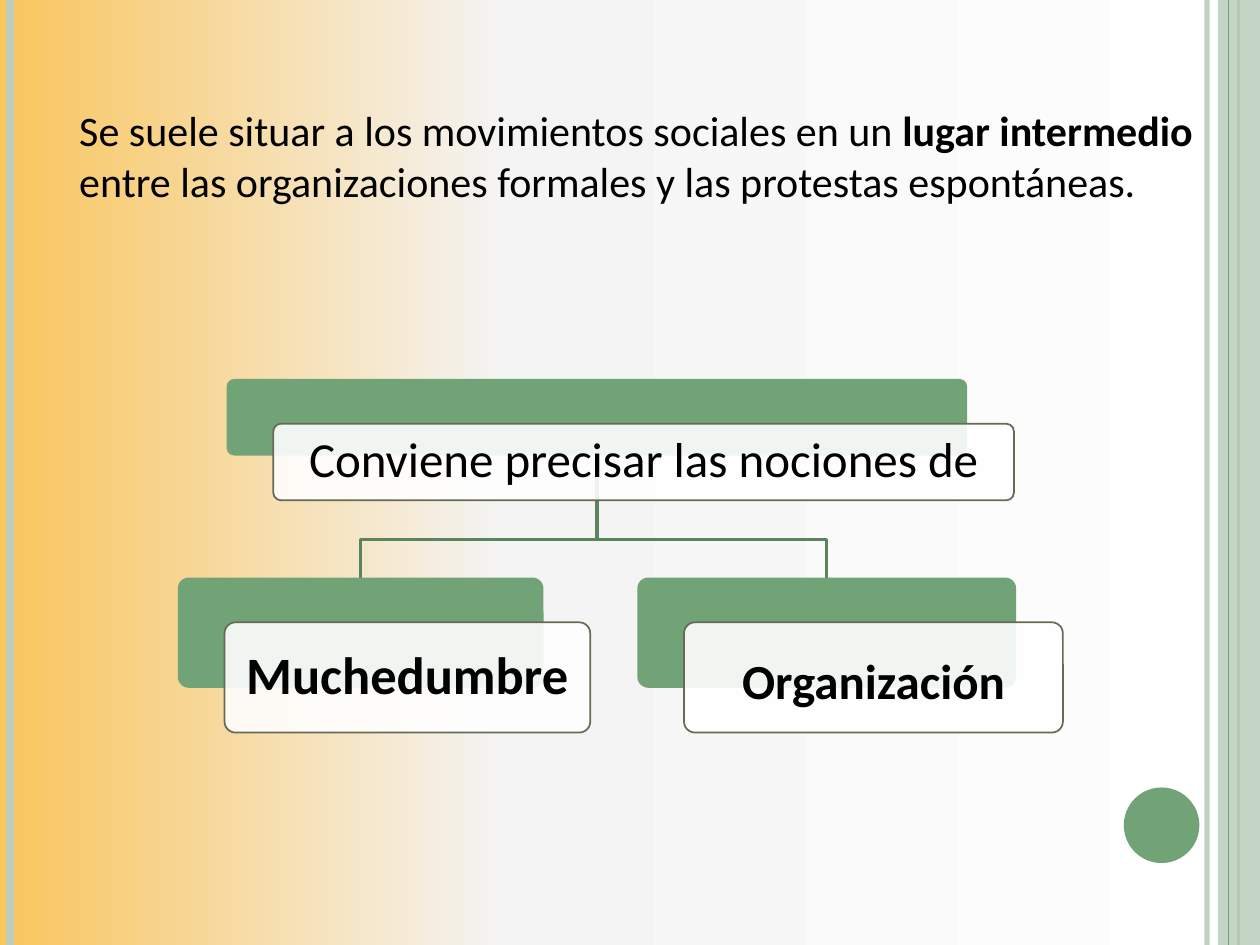
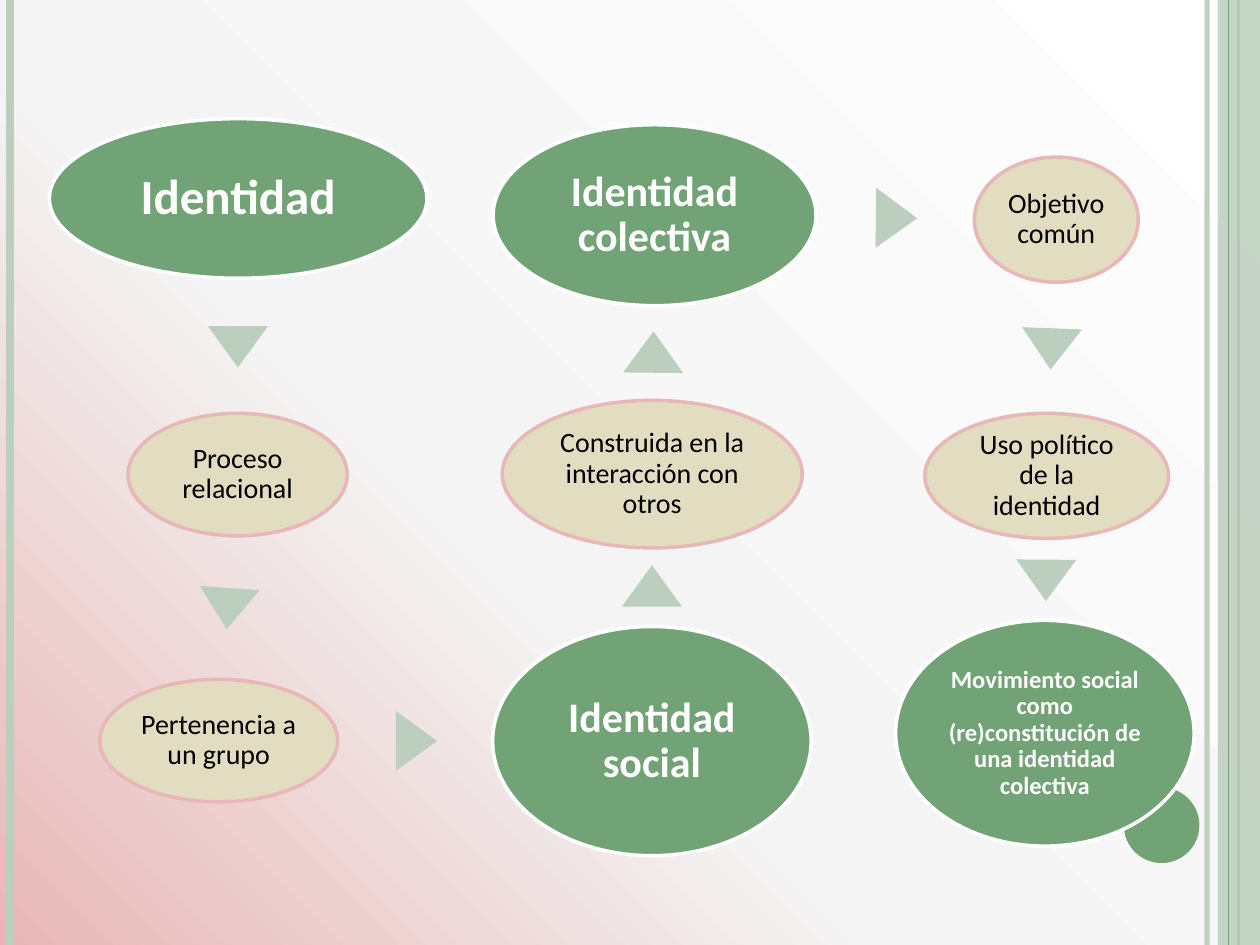
from lxml.etree import SubElement
from pptx import Presentation
from pptx.dml.color import RGBColor
from pptx.enum.shapes import MSO_CONNECTOR, MSO_SHAPE
from pptx.enum.text import MSO_ANCHOR, PP_ALIGN
from pptx.oxml.ns import qn
from pptx.util import Pt

GREEN = RGBColor(0x72, 0xA3, 0x76)
DARK_GREEN = RGBColor(0x5B, 0x83, 0x5E)
PALE_GREEN = RGBColor(0xBC, 0xCE, 0xBD)
OLIVE = RGBColor(0x67, 0x6A, 0x55)
SAND = RGBColor(0xE2, 0xDC, 0xC1)
PINK = RGBColor(0xE8, 0xB7, 0xB7)
AMBER = RGBColor(0xF9, 0xC5, 0x5D)
SMOKE = RGBColor(0xF4, 0xF4, 0xF4)
WHITE = RGBColor(0xFF, 0xFF, 0xFF)
BLACK = RGBColor(0, 0, 0)

FONT = "Calibri"
WIDTH, HEIGHT = 720, 540
CARD_SHIFT = (26.7, 25.6)
ARROW_SIZE = (34.3, 23.6)


def fade(shape, percent):
    """Set the opacity of the first colour of the shape."""
    color = next(shape.element.spPr.iter(qn("a:srgbClr")))
    SubElement(color, qn("a:alpha")).set("val", str(percent * 1000))


def write(tf, runs, size=16, color=BLACK, bold=False, align=PP_ALIGN.CENTER,
          anchor=MSO_ANCHOR.MIDDLE, spacing=0.9, insets=(2, 2, 2, 2)):
    """Fill a text frame; runs is a string or a list of (text, bold)."""
    tf.word_wrap = True
    tf.vertical_anchor = anchor
    (tf.margin_left, tf.margin_top,
     tf.margin_right, tf.margin_bottom) = map(Pt, insets)
    p = tf.paragraphs[0]
    p.alignment = align
    p.line_spacing = spacing
    for text, is_bold in [(runs, bold)] if isinstance(runs, str) else runs:
        r = p.add_run()
        r.text = text
        r.font.name = FONT
        r.font.size = Pt(size)
        r.font.bold = is_bold
        r.font.color.rgb = color


class Deck:
    """Holds the shared style and the slide being drawn."""

    def __init__(self):
        self.prs = Presentation()
        self.prs.slide_width, self.prs.slide_height = Pt(WIDTH), Pt(HEIGHT)
        self.s = None

    def new_slide(self, start_color, corner=False):
        self.s = self.prs.slides.add_slide(self.prs.slide_layouts[6])
        self.background(start_color, corner)
        self.rule(689.8, PALE_GREEN, 3, opacity=93)
        self.rule(5.8, PALE_GREEN, 4.5)
        self.rule(707.8, GREEN, 1.5)
        self.shape(MSO_SHAPE.RECTANGLE, (696, 0, 24, HEIGHT), PALE_GREEN, opacity=87)
        self.rule(702, GREEN, 0.75)
        self.shape(MSO_SHAPE.OVAL, (642.2, 450, 43.2, 43.2), GREEN)

    def background(self, start_color, corner):
        """Fade from the left edge, or from the bottom left corner."""
        self.s.background.fill.solid()
        bg = next(self.s.element.iter(qn("p:bgPr")))
        bg.remove(bg[0])
        grad = SubElement(bg, qn("a:gradFill"), rotWithShape="1")
        bg.insert(0, grad)
        stops = SubElement(grad, qn("a:gsLst"))
        for pos, color in ((0, start_color), (40, SMOKE), (100, WHITE)):
            gs = SubElement(stops, qn("a:gs"), pos=str(pos * 1000))
            SubElement(gs, qn("a:srgbClr"), val=str(color))
        if corner:
            circle = SubElement(grad, qn("a:path"))
            circle.set("path", "circle")
            SubElement(circle, qn("a:fillToRect"), t="100000", r="100000")
        else:
            SubElement(grad, qn("a:lin"), ang="0", scaled="0")

    def rule(self, x, color, width, opacity=None):
        """Vertical line over the full height."""
        line = self.s.shapes.add_connector(
            MSO_CONNECTOR.STRAIGHT, Pt(x), 0, Pt(x), Pt(HEIGHT))
        line.line.color.rgb = color
        line.line.width = Pt(width)
        SubElement(line.element.spPr, qn("a:effectLst"))
        if opacity:
            fade(line, opacity)

    def shape(self, kind, box, fill, line=None, width=2, opacity=None):
        sp = self.s.shapes.add_shape(kind, *map(Pt, box))
        sp.shadow.inherit = False
        sp.fill.solid()
        sp.fill.fore_color.rgb = fill
        if line is None:
            sp.line.fill.background()
        else:
            sp.line.color.rgb = line
            sp.line.width = Pt(width)
        if opacity:
            fade(sp, opacity)
        return sp

    def paragraph(self, box, runs, size, indent):
        tb = self.s.shapes.add_textbox(*map(Pt, box))
        write(tb.text_frame, runs, size=size, align=PP_ALIGN.LEFT,
              anchor=MSO_ANCHOR.TOP, spacing=1.0, insets=(7.2, 3.6, 7.2, 3.6))
        ppr = tb.text_frame.paragraphs[0]._p.get_or_add_pPr()
        ppr.set("marL", str(Pt(indent)))

    def branch(self, parent, child):
        """Elbow line from the bottom of one box to the top of another."""
        px, py, pw, ph = parent
        cx, cy, cw, _ = child
        start, end = px + pw / 2, cx + cw / 2
        bend = cy - 21.6
        fb = self.s.shapes.build_freeform(Pt(start), Pt(py + ph))
        fb.add_line_segments(
            [(Pt(start), Pt(bend)), (Pt(end), Pt(bend)), (Pt(end), Pt(cy))],
            close=False)
        sp = fb.convert_to_shape()
        sp.shadow.inherit = False
        sp.fill.background()
        sp.line.color.rgb = DARK_GREEN
        sp.line.width = Pt(2)

    def card(self, box, text, size, bold=False, drop=0):
        """Green box with a shifted white one over it; drop lowers the text."""
        x, y, w, h = box
        dx, dy = CARD_SHIFT
        back = self.shape(MSO_SHAPE.ROUNDED_RECTANGLE, box, GREEN)
        front = self.shape(MSO_SHAPE.ROUNDED_RECTANGLE, (x + dx, y + dy, w, h),
                           WHITE, OLIVE, 1, opacity=90)
        for sp in (back, front):
            sp.adjustments[0] = 0.1
        write(front.text_frame, text, size=size, bold=bold,
              insets=(8, 8 + 2 * drop, 8, 8))

    def concept(self, box, text, size):
        """Main idea: green ellipse with bold white text."""
        sp = self.shape(MSO_SHAPE.OVAL, box, GREEN, WHITE)
        write(sp.text_frame, text, size=size, color=WHITE, bold=True)

    def step(self, box, text):
        """Intermediate idea: sand ellipse with black text."""
        sp = self.shape(MSO_SHAPE.OVAL, box, SAND, PINK)
        write(sp.text_frame, text)

    def arrow(self, x, y, rotation):
        sp = self.shape(MSO_SHAPE.ISOSCELES_TRIANGLE, (x, y, *ARROW_SIZE), PALE_GREEN)
        sp.rotation = rotation


def movements_slide(deck):
    deck.new_slide(AMBER)
    deck.paragraph(
        (16.6, 56.4, 675.6, 383.8),
        [("Se suele situar a los movimientos sociales en un ", False),
         ("lugar intermedio ", True),
         ("entre las organizaciones formales y las protestas espontáneas.", False)],
        size=24, indent=21.6)
    notions = (129.5, 216.5, 423.2, 43.8)
    crowd = (101.6, 330, 209, 63)
    organization = (364.2, 330, 216.5, 63)
    for child in (organization, crowd):
        deck.branch(notions, child)
    deck.card(notions, "Conviene precisar las nociones de", 28)
    deck.card(crowd, "Muchedumbre", 30, bold=True)
    deck.card(organization, "Organización", 28, bold=True, drop=3.5)


def identity_slide(deck):
    deck.new_slide(PINK, corner=True)
    for box, text, size in (
            ((28.2, 67.8, 215.8, 91.2), "Identidad", 28),
            ((281.5, 358, 182, 131), "Identidad social", 24),
            ((281.8, 71.3, 184.5, 103.4), "Identidad colectiva", 24),
            ((511.8, 354.5, 170.6, 129),
             "Movimiento social como (re)constitución de una identidad colectiva", 14)):
        deck.concept(box, text, size)
    for box, text in (
            ((73.2, 236.2, 125.3, 70), "Proceso relacional"),
            ((57, 388.2, 136, 70), "Pertenencia a un grupo"),
            ((287, 228.8, 171.4, 84.3), "Construida en la interacción con otros"),
            ((556.8, 89.8, 93.6, 71.5), "Objetivo común"),
            ((528.5, 236.2, 139.2, 71.5), "Uso político de la identidad")):
        deck.step(box, text)
    for x, y, rotation in (
            (118.8, 186.4, 180.1), (113.2, 336, 184), (220.8, 411.6, 90),
            (355.4, 323, 0), (356.2, 189.4, 0.6), (495.2, 112.8, 90.7),
            (583.6, 187.6, 182.1), (580.6, 319.8, 180.4)):
        deck.arrow(x, y, rotation)


def main():
    deck = Deck()
    movements_slide(deck)
    identity_slide(deck)
    deck.prs.save("out.pptx")


if __name__ == "__main__":
    main()
